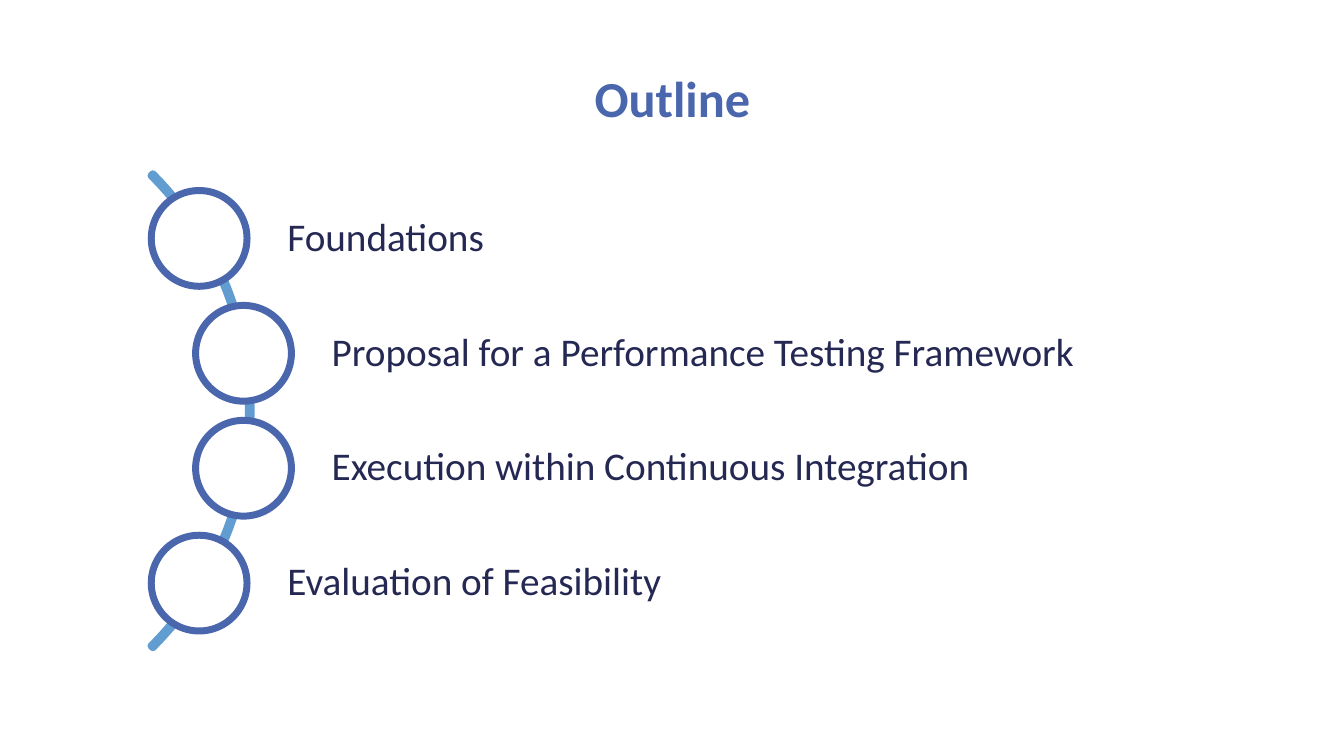
from pptx import Presentation
from pptx.dml.color import RGBColor
from pptx.enum.shapes import MSO_SHAPE as Preset
from pptx.enum.text import MSO_ANCHOR as Anchor, PP_ALIGN as Align
from pptx.util import Pt

PX = 9144
FONT = "Calibri"
BLUE = RGBColor(0x4A, 0x66, 0xAC)
LIGHT_BLUE = RGBColor(0x62, 0x9D, 0xD1)
NAVY = RGBColor(0x24, 0x28, 0x52)
WHITE = RGBColor(0xFF, 0xFF, 0xFF)

TOPICS = [
    ("Foundations", 0),
    ("Proposal for a Performance Testing Framework", 44),
    ("Execution within Continuous Integration", 44),
    ("Evaluation of Feasibility", 0),
]


def add_outlined(slide, preset, box, color, weight, fill=None):
    shape = slide.shapes.add_shape(preset, *(n * PX for n in box))
    shape.shadow.inherit = False
    if fill is None:
        shape.fill.background()
    else:
        shape.fill.solid()
        shape.fill.fore_color.rgb = fill
    shape.line.color.rgb = color
    shape.line.width = Pt(weight)
    return shape


def write(frame, text, size, color, align, anchor, bold=False):
    frame.word_wrap = True
    frame.vertical_anchor = anchor
    frame.text = text
    paragraph = frame.paragraphs[0]
    paragraph.alignment = align
    paragraph.line_spacing = 0.9
    font = paragraph.runs[0].font
    font.name = FONT
    font.size = Pt(size)
    font.bold = bold
    font.color.rgb = color


def add_title(slide, box, text):
    title = slide.shapes.add_textbox(*(n * PX for n in box))
    write(title.text_frame, text, 36, BLUE, Align.CENTER, Anchor.BOTTOM, True)


def add_arc(slide, box):
    arc = add_outlined(slide, Preset.BLOCK_ARC, box, LIGHT_BLUE, 5)
    for index, value in enumerate((189, 27, 0.004)):
        arc.adjustments[index] = value


def add_topic(slide, box, text):
    left, top, width, height = box
    label_left, label_inset = 75, 9
    label = add_outlined(
        slide, Preset.RECTANGLE,
        (left + label_left, top + label_inset, width - label_left, height - 2 * label_inset),
        WHITE, 1)
    frame = label.text_frame
    frame.margin_left = 60 * PX
    frame.margin_right = frame.margin_top = frame.margin_bottom = 8 * PX
    write(frame, text, 28, NAVY, Align.LEFT, Anchor.MIDDLE)
    add_outlined(slide, Preset.OVAL, (left, top, height, height), BLUE, 5, WHITE)


def add_topics(slide, box):
    left, top, width, height = box
    diameter = 95
    pitch = (height - diameter) // (len(TOPICS) - 1)
    arc_size, arc_reach = 665, 99
    add_arc(slide, (left + arc_reach - arc_size, top + (height - arc_size) // 2, arc_size, arc_size))
    for row, (text, indent) in enumerate(TOPICS):
        add_topic(slide, (left + indent, top + row * pitch, width - indent, diameter), text)


def main():
    deck = Presentation()
    deck.slide_width = 1333 * PX
    deck.slide_height = 750 * PX
    slide = deck.slides.add_slide(deck.slide_layouts[6])
    add_title(slide, (142, 43, 1050, 89), "Outline")
    add_topics(slide, (150, 189, 1063, 437))
    deck.save("out.pptx")


if __name__ == "__main__":
    main()
